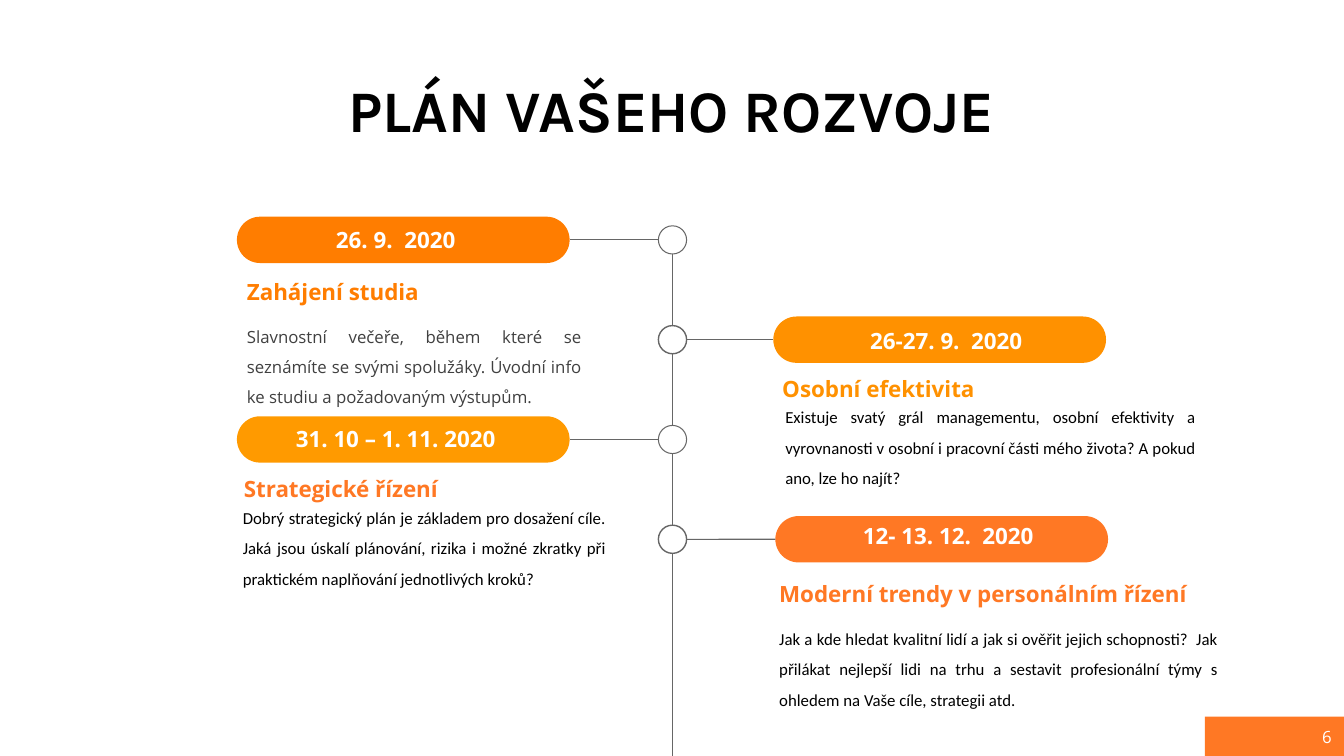
from dataclasses import dataclass

from lxml import etree
from pptx import Presentation
from pptx.dml.color import RGBColor
from pptx.enum.shapes import MSO_CONNECTOR, MSO_SHAPE
from pptx.enum.text import MSO_ANCHOR, MSO_AUTO_SIZE, PP_ALIGN
from pptx.oxml.ns import qn
from pptx.util import Inches, Pt

STRAIGHT = MSO_CONNECTOR.STRAIGHT
RECTANGLE, PILL, CIRCLE = MSO_SHAPE.RECTANGLE, MSO_SHAPE.ROUNDED_RECTANGLE, MSO_SHAPE.OVAL
LEFT, CENTER, RIGHT, JUSTIFY = PP_ALIGN.LEFT, PP_ALIGN.CENTER, PP_ALIGN.RIGHT, PP_ALIGN.JUSTIFY
MIDDLE = MSO_ANCHOR.MIDDLE
GROW = MSO_AUTO_SIZE.SHAPE_TO_FIT_TEXT
PILL_LEFT_SIDE, PILL_RIGHT_SIDE = 1, 3


@dataclass(frozen=True)
class Theme:
    black: str = "000000"
    white: str = "FFFFFF"
    body_gray: str = "404040"
    line_gray: str = "666666"
    deep_orange: str = "FF7D00"
    orange: str = "FF9100"
    amber: str = "FF9A00"
    coral: str = "FF7824"
    title_font: str = "Karla"
    main_font: str = "Open Sans"
    body_font: str = "Calibri"
    title_size: int = 42
    heading_size: int = 16
    body_size: int = 12


theme = Theme()


def add_text(shapes, box, text, font, size, color, bold=False, align=LEFT,
             spacing=None, **frame_format):
    text_box = shapes.add_textbox(*map(Inches, box))
    frame = text_box.text_frame
    for name, value in ({"word_wrap": True} | frame_format).items():
        setattr(frame, name, value)
    paragraph = frame.paragraphs[0]
    paragraph.text = text
    paragraph.alignment = align
    paragraph.line_spacing = spacing
    run_font = paragraph.runs[0].font
    for name, value in {"name": font, "size": Pt(size), "bold": bold}.items():
        setattr(run_font, name, value)
    run_font.color.rgb = RGBColor.from_string(color)


def add_gray_line(start, end):
    line = slide.shapes.add_connector(STRAIGHT, *map(Inches, start + end))
    line.line.color.rgb = RGBColor.from_string(theme.line_gray)
    line.line.width = Pt(0.75)
    etree.SubElement(line._element.spPr, qn("a:effectLst"))
    return line


prs = Presentation()
prs.slide_width, prs.slide_height = Inches(13.33), Inches(7.5)
slide = prs.slides.add_slide(prs.slide_layouts[6])

# Page number
page_tab = slide.shapes.add_shape(RECTANGLE, *map(Inches, (11.95, 7.11, 1.38, 0.39)))
page_tab.shadow.inherit = False
page_tab.fill.solid()
page_tab.fill.fore_color.rgb = RGBColor.from_string(theme.coral)
page_tab.line.fill.background()
add_text(slide.shapes, (12.31, 7.13, 1.03, 0.35), "6", theme.main_font, theme.body_size,
         theme.white, align=RIGHT, word_wrap=False, vertical_anchor=MIDDLE,
         margin_left=Inches(0.13), margin_right=Inches(0.13),
         margin_top=Inches(0.07), margin_bottom=Inches(0.07))

add_text(slide.shapes, (0.9, 0.87, 11.52, 0.51), "PLÁN VAŠEHO ROZVOJE", theme.title_font,
         theme.title_size, theme.black, bold=True, align=CENTER, spacing=0.9,
         vertical_anchor=MIDDLE)

# Timeline
SPINE_X, FIRST_Y, STEP = 6.67, 2.38, 0.99
RADIUS = 0.14
PILL_W, PILL_H = 3.3, 0.46
DATE_W, TEXT_H, BODY_H = 2.43, 0.37, 1.01

add_gray_line((SPINE_X, FIRST_Y + RADIUS), (SPINE_X, 7.5))

events = [
    dict(date="26. 9.  2020", heading="Zahájení studia",
         body="Slavnostní večeře, během které se seznámíte se svými spolužáky. "
              "Úvodní info ke studiu a požadovaným výstupům.",
         color=theme.deep_orange, heading_color=theme.deep_orange, pill_x=2.35,
         date_at=(2.71, 2.19), heading_box=(2.35, 2.71, 3.35), body_box=(2.35, 3.09, 3.52),
         body_font=theme.main_font, body_color=theme.body_gray, ring=0.75),
    dict(date="26-27. 9.  2020", heading="Osobní efektivita",
         body="Existuje svatý grál managementu, osobní efektivity a vyrovnanosti "
              "v osobní i pracovní části mého života? A pokud ano, lze ho najít?",
         color=theme.orange, heading_color=theme.orange, pill_x=7.67,
         date_at=(8.17, 3.2), heading_box=(7.66, 3.67, 3.35), body_box=(7.69, 3.89, 4.27),
         body_font=theme.body_font, body_color=theme.black, ring=1),
    dict(date="31. 10 – 1. 11. 2020", heading="Strategické řízení",
         body="Dobrý strategický plán je základem pro dosažení cíle. Jaká jsou úskalí "
              "plánování, rizika i možné zkratky při praktickém naplňování "
              "jednotlivých kroků?",
         color=theme.amber, heading_color=theme.coral, pill_x=2.35,
         date_at=(2.71, 4.17), heading_box=(2.32, 4.66, 3.35), body_box=(2.31, 4.89, 3.8),
         body_font=theme.body_font, body_color=theme.black, ring=0.75),
    dict(date="12- 13. 12.  2020", heading="Moderní trendy v personálním řízení",
         body="Jak a kde hledat kvalitní lidí a jak si ověřit jejich schopnosti?  Jak "
              "přilákat nejlepší lidi na trhu a sestavit profesionální týmy s ohledem "
              "na Vaše cíle, strategii atd.",
         color=theme.coral, heading_color=theme.coral, pill_x=7.69,
         date_at=(8.19, 5.13), heading_box=(7.63, 5.71, 4.39), body_box=(7.63, 6.09, 4.55),
         body_font=theme.body_font, body_color=theme.black, ring=1),
]

for index, event in enumerate(events):
    center_y = FIRST_Y + index * STEP
    on_left = event["pill_x"] < SPINE_X

    milestone = slide.shapes.add_shape(CIRCLE, *map(Inches, (
        SPINE_X - RADIUS, center_y - RADIUS, 2 * RADIUS, 2 * RADIUS)))
    milestone.line.color.rgb = RGBColor.from_string(theme.line_gray)
    milestone.line.width = Pt(event["ring"])

    date_group = slide.shapes.add_group_shape()
    pill = date_group.shapes.add_shape(PILL, *map(Inches, (
        event["pill_x"], center_y - PILL_H / 2, PILL_W, PILL_H)))
    pill.adjustments[0] = 0.5
    pill.line.fill.background()
    for shape, color in ((milestone, theme.white), (pill, event["color"])):
        shape.shadow.inherit = False
        shape.fill.solid()
        shape.fill.fore_color.rgb = RGBColor.from_string(color)
    add_text(date_group.shapes, (*event["date_at"], DATE_W, TEXT_H), event["date"],
             theme.main_font, theme.heading_size, theme.white, bold=True, align=CENTER,
             auto_size=GROW)

    circle_edge = SPINE_X - RADIUS if on_left else SPINE_X + RADIUS
    branch = add_gray_line((circle_edge, center_y), (event["pill_x"], center_y))
    branch.end_connect(pill, PILL_RIGHT_SIDE if on_left else PILL_LEFT_SIDE)

    add_text(slide.shapes, (*event["heading_box"], TEXT_H), event["heading"],
             theme.main_font, theme.heading_size, event["heading_color"], bold=True,
             auto_size=GROW)
    add_text(slide.shapes, (*event["body_box"], BODY_H), event["body"],
             event["body_font"], theme.body_size, event["body_color"], align=JUSTIFY,
             spacing=1.5, auto_size=GROW)

prs.save("out.pptx")
